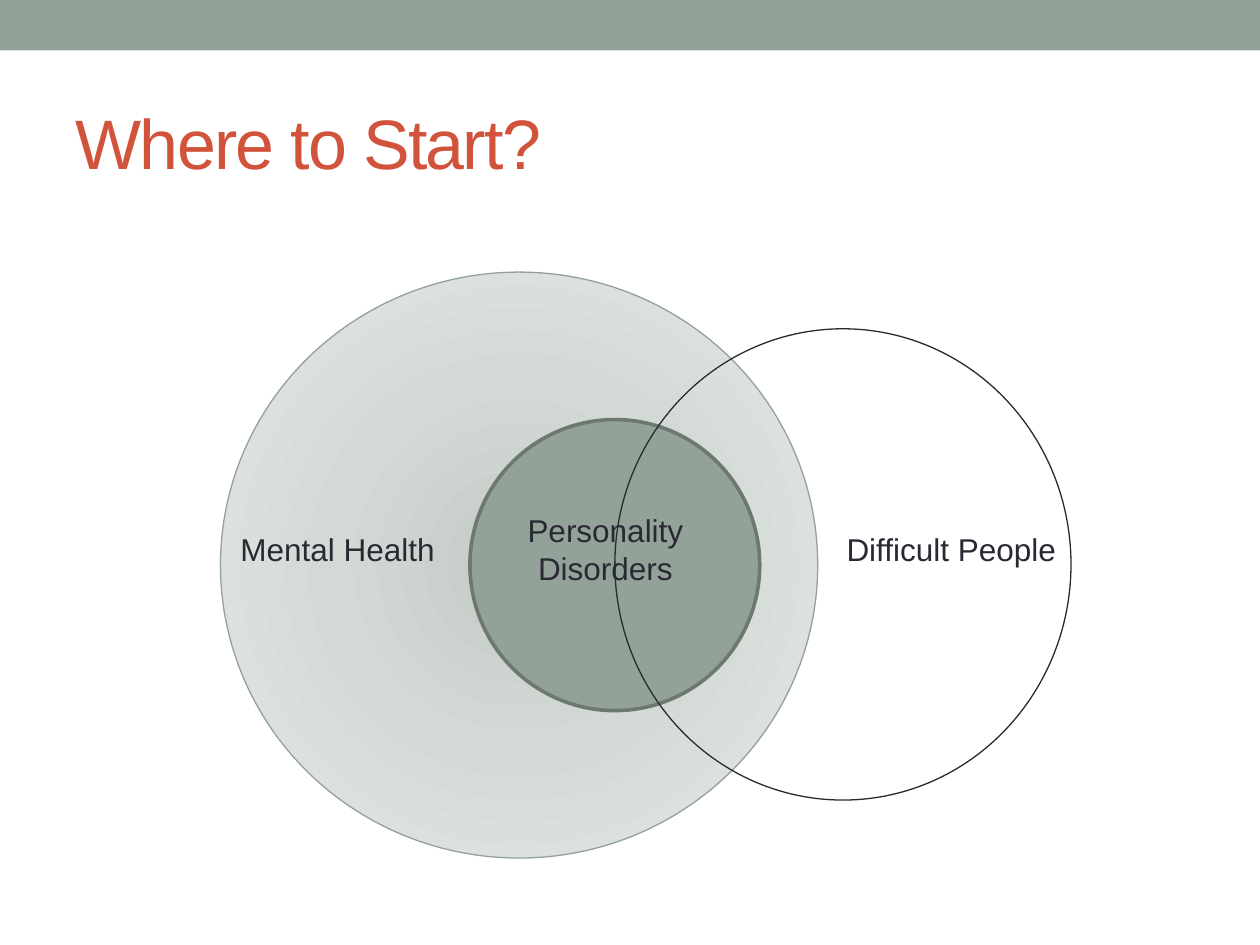
"""Build the "Where to Start?" slide with three overlapping circles."""
import pptx
import pptx.dml.color
import pptx.enum.shapes
import pptx.enum.text
import pptx.oxml
import pptx.oxml.ns
import pptx.util

Inches = pptx.util.Inches
ALIGN = pptx.enum.text.PP_ALIGN
ANCHOR = pptx.enum.text.MSO_ANCHOR
SHAPE = pptx.enum.shapes.MSO_SHAPE

SAGE, DARK_SAGE, INK, RED = "93A299", "6D7871", "292934", "D2533C"
HALO_STOPS = [(0, "C4CAC6"), (45, "D3DAD6"), (100, "E7EAE8")]


def set_color(color_format, value):
    color_format.rgb = pptx.dml.color.RGBColor.from_string(value)


def write_text(text_frame, text, *, size=18, color=INK, font="Arial",
               align=ALIGN.LEFT, anchor=ANCHOR.TOP, wrap=False, tracking=0,
               auto_size=pptx.enum.text.MSO_AUTO_SIZE.SHAPE_TO_FIT_TEXT):
    text_frame.text = text
    text_frame.word_wrap = wrap
    text_frame.auto_size = auto_size
    text_frame.vertical_anchor = anchor
    for paragraph in text_frame.paragraphs:
        paragraph.alignment = align
        for run in paragraph.runs:
            run.font.size = pptx.util.Pt(size)
            run.font.name = font
            set_color(run.font.color, color)
            if tracking:
                run.font._element.set("spc", str(tracking * 100))


class SlideBuilder:
    def __init__(self, presentation):
        self.slide = presentation.slides.add_slide(presentation.slide_layouts[5])

    def title(self, text, left, top, width, height):
        shape = self.slide.shapes.title
        shape.left, shape.top = Inches(left), Inches(top)
        shape.width, shape.height = Inches(width), Inches(height)
        write_text(shape.text_frame, text, size=40, color=RED, tracking=-1,
                   anchor=ANCHOR.MIDDLE, wrap=True,
                   auto_size=pptx.enum.text.MSO_AUTO_SIZE.NONE)

    def shape(self, kind, box, fill=None, line=None, line_width=0.75):
        shape = self.slide.shapes.add_shape(kind, *map(Inches, box))
        shape.shadow.inherit = False
        if fill:
            shape.fill.solid()
            set_color(shape.fill.fore_color, fill)
        else:
            shape.fill.background()
        if line:
            set_color(shape.line.color, line)
            shape.line.width = pptx.util.Pt(line_width)
        else:
            shape.line.fill.background()
        return shape

    def circle(self, *box, **style):
        return self.shape(SHAPE.OVAL, box, **style)

    def radial_circle(self, *box, stops, **style):
        circle = self.circle(*box, **style)
        circle.fill.gradient()
        stop_xml = "".join(
            f'<a:gs pos="{position * 1000}"><a:srgbClr val="{color}"/></a:gs>'
            for position, color in stops)
        gradient = pptx.oxml.parse_xml(
            f'<a:gradFill {pptx.oxml.ns.nsdecls("a")} rotWithShape="1">'
            f'<a:gsLst>{stop_xml}</a:gsLst><a:path path="circle">'
            '<a:fillToRect l="100000" t="100000" r="100000" b="100000"/>'
            '</a:path></a:gradFill>')
        properties = circle._element.spPr
        properties.replace(properties.find(pptx.oxml.ns.qn("a:gradFill")), gradient)

    def label(self, text, *box, **style):
        text_box = self.slide.shapes.add_textbox(*map(Inches, box))
        write_text(text_box.text_frame, text, **style)


def main():
    presentation = pptx.Presentation()
    presentation.slide_width, presentation.slide_height = Inches(10), Inches(7.5)
    builder = SlideBuilder(presentation)
    builder.shape(SHAPE.RECTANGLE, (0, 0, 10, 0.4), fill=SAGE)
    builder.title("Where to Start?", 0.5, 0.58, 9, 1.08)
    builder.radial_circle(1.75, 2.16, 4.74, 4.65, stops=HALO_STOPS, line=SAGE)
    builder.circle(3.73, 3.33, 2.3, 2.31, fill=SAGE, line=DARK_SAGE, line_width=2.08)
    builder.label("Mental Health", 1.81, 4.16, 1.76, 0.4)
    builder.label("Personality\nDisorders", 4.08, 4.01, 1.45, 0.71, align=ALIGN.CENTER)
    builder.circle(4.88, 2.61, 3.62, 3.74, line=INK)
    builder.label("Difficult People", 6.62, 4.16, 1.88, 0.4)
    presentation.save("out.pptx")


if __name__ == "__main__":
    main()
